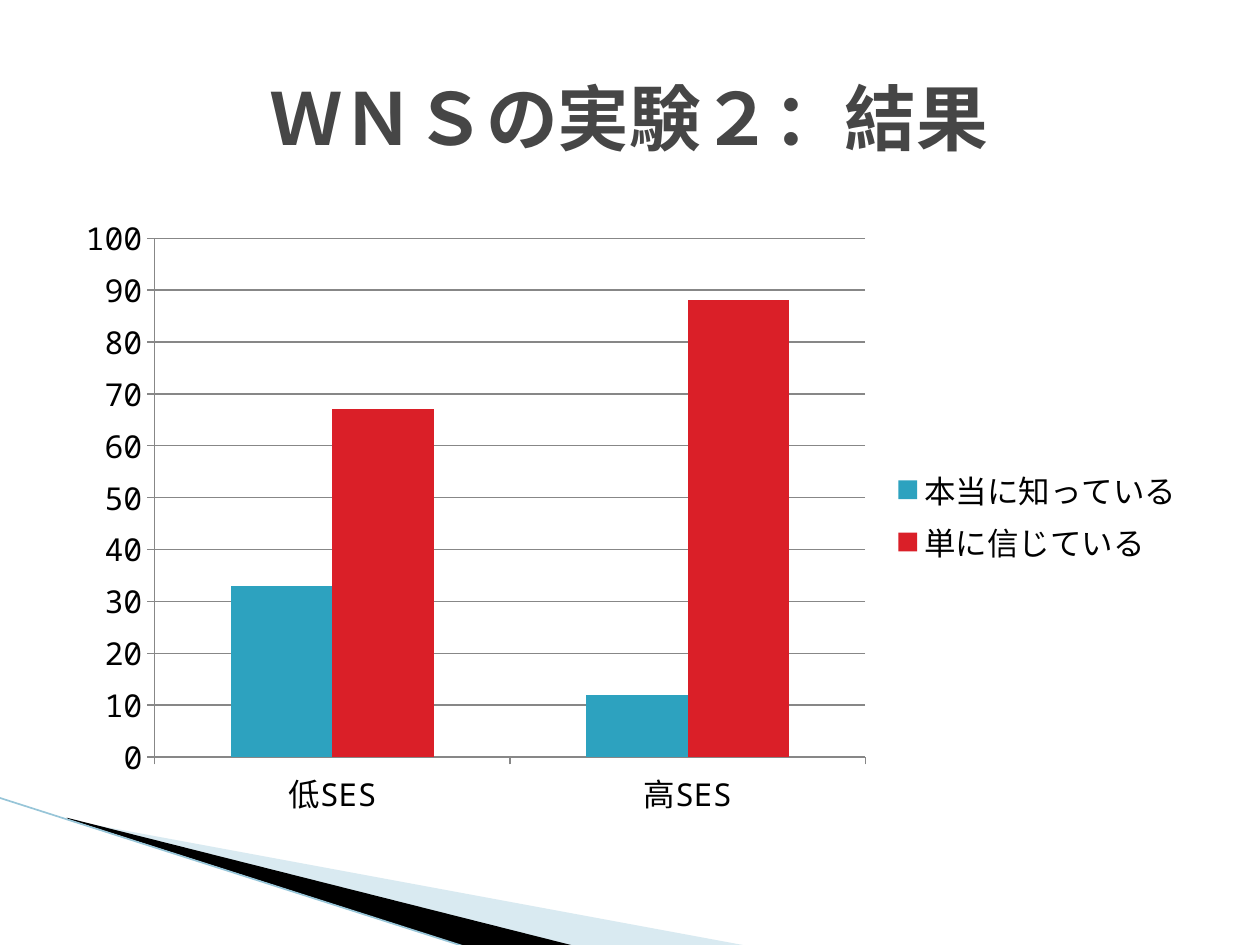
from typing import NamedTuple

from lxml import etree
from pptx import Presentation
from pptx.chart.data import CategoryChartData
from pptx.dml.color import RGBColor
from pptx.enum.chart import XL_CHART_TYPE, XL_LEGEND_POSITION, XL_TICK_MARK
from pptx.enum.shapes import MSO_CONNECTOR
from pptx.enum.text import MSO_ANCHOR, PP_ALIGN
from pptx.oxml.ns import qn
from pptx.util import Inches, Pt

CLUSTERED = XL_CHART_TYPE.COLUMN_CLUSTERED
RIGHT = XL_LEGEND_POSITION.RIGHT
OUTSIDE = XL_TICK_MARK.OUTSIDE
STRAIGHT = MSO_CONNECTOR.STRAIGHT
MIDDLE = MSO_ANCHOR.MIDDLE
CENTER = PP_ALIGN.CENTER

BLACK = RGBColor(0x00, 0x00, 0x00)
TITLE_GRAY = RGBColor(0x46, 0x46, 0x46)
GRID_GRAY = RGBColor(0x87, 0x87, 0x87)
PALE_BLUE = RGBColor(0xA0, 0xCB, 0xDC)
EDGE_BLUE = RGBColor(0x97, 0xC5, 0xD8)
TEAL = RGBColor(0x2D, 0xA2, 0xBF)
RED = RGBColor(0xDA, 0x1F, 0x28)

TITLE_FONT = "Noto Sans CJK JP"
CHART_FONT = "Noto Sans Mono"


class Wedge(NamedTuple):
    points: list[tuple[float, float]]
    color: RGBColor
    opacity: int = 100


class Series(NamedTuple):
    name: str
    values: tuple[int, ...]
    color: RGBColor


WEDGES = [
    Wedge([(0.55, 6.51), (5.95, 7.51), (4.56, 7.51), (0.55, 6.5)], PALE_BLUE, 40),
    Wedge([(0.53, 6.49), (4.57, 7.51), (3.72, 7.52), (0.54, 6.5)], BLACK),
]
CATEGORIES = ["低SES", "高SES"]
SERIES = [
    Series("本当に知っている", (33, 12), TEAL),
    Series("単に信じている", (67, 88), RED),
]


def add_wedge(s, wedge: Wedge) -> None:
    start, *rest = [(Inches(x), Inches(y)) for x, y in wedge.points]
    builder = s.shapes.build_freeform(*start)
    builder.add_line_segments(rest, close=True)
    sp = builder.convert_to_shape()
    sp.shadow.inherit = False
    sp.line.fill.background()
    sp.fill.solid()
    sp.fill.fore_color.rgb = wedge.color
    if wedge.opacity < 100:
        color = sp.fill._xPr.find(qn("a:solidFill"))[0]
        etree.SubElement(color, qn("a:alpha"), val=str(wedge.opacity * 1000))


def add_edge(s) -> None:
    """Draw the thin line along the lower side of the wedges."""
    line = s.shapes.add_connector(
        STRAIGHT, Inches(-0.01), Inches(6.33), Inches(3.71), Inches(7.52))
    line.line.color.rgb = EDGE_BLUE
    line.line.width = Pt(0.95)
    etree.SubElement(line._element.spPr, qn("a:effectLst"))


def add_results_chart(s) -> None:
    data = CategoryChartData()
    data.categories = CATEGORIES
    for series in SERIES:
        data.add_series(series.name, series.values)
    chart = s.shapes.add_chart(
        CLUSTERED, Inches(0.5), Inches(1.62), Inches(9), Inches(4.95), data).chart
    chart.font.name = CHART_FONT
    chart.font.size = Pt(18)
    chart.font.color.rgb = BLACK
    chart.has_title = False
    chart.has_legend = True
    chart.legend.position = RIGHT
    chart.legend.include_in_layout = False

    plot = chart.plots[0]
    plot.gap_width = 150
    plot.overlap = 0
    plot.vary_by_categories = False
    for bars, series in zip(plot.series, SERIES):
        bars.format.fill.solid()
        bars.format.fill.fore_color.rgb = series.color

    value_axis = chart.value_axis
    value_axis.minimum_scale = 0
    value_axis.maximum_scale = 100
    value_axis.major_unit = 10
    value_axis.has_major_gridlines = True
    value_axis.major_gridlines.format.line.color.rgb = GRID_GRAY
    for axis in (chart.category_axis, value_axis):
        axis.major_tick_mark = OUTSIDE
        axis.format.line.color.rgb = GRID_GRAY


def set_title(s, text: str) -> None:
    title = s.shapes.title
    title.left, title.top = Inches(0.5), Inches(0.3)
    title.width, title.height = Inches(9), Inches(1.25)
    tf = title.text_frame
    tf.text = text
    tf.vertical_anchor = MIDDLE
    p = tf.paragraphs[0]
    p.alignment = CENTER
    p.font.name = TITLE_FONT
    p.font.size = Pt(41)
    p.font.bold = True
    p.font.color.rgb = TITLE_GRAY


def main() -> None:
    prs = Presentation()
    prs.slide_width, prs.slide_height = Inches(10), Inches(7.5)
    s = prs.slides.add_slide(prs.slide_layouts[5])
    for wedge in WEDGES:
        add_wedge(s, wedge)
    add_edge(s)
    add_results_chart(s)
    set_title(s, "ＷＮＳの実験２：結果")
    prs.save("out.pptx")


if __name__ == "__main__":
    main()
